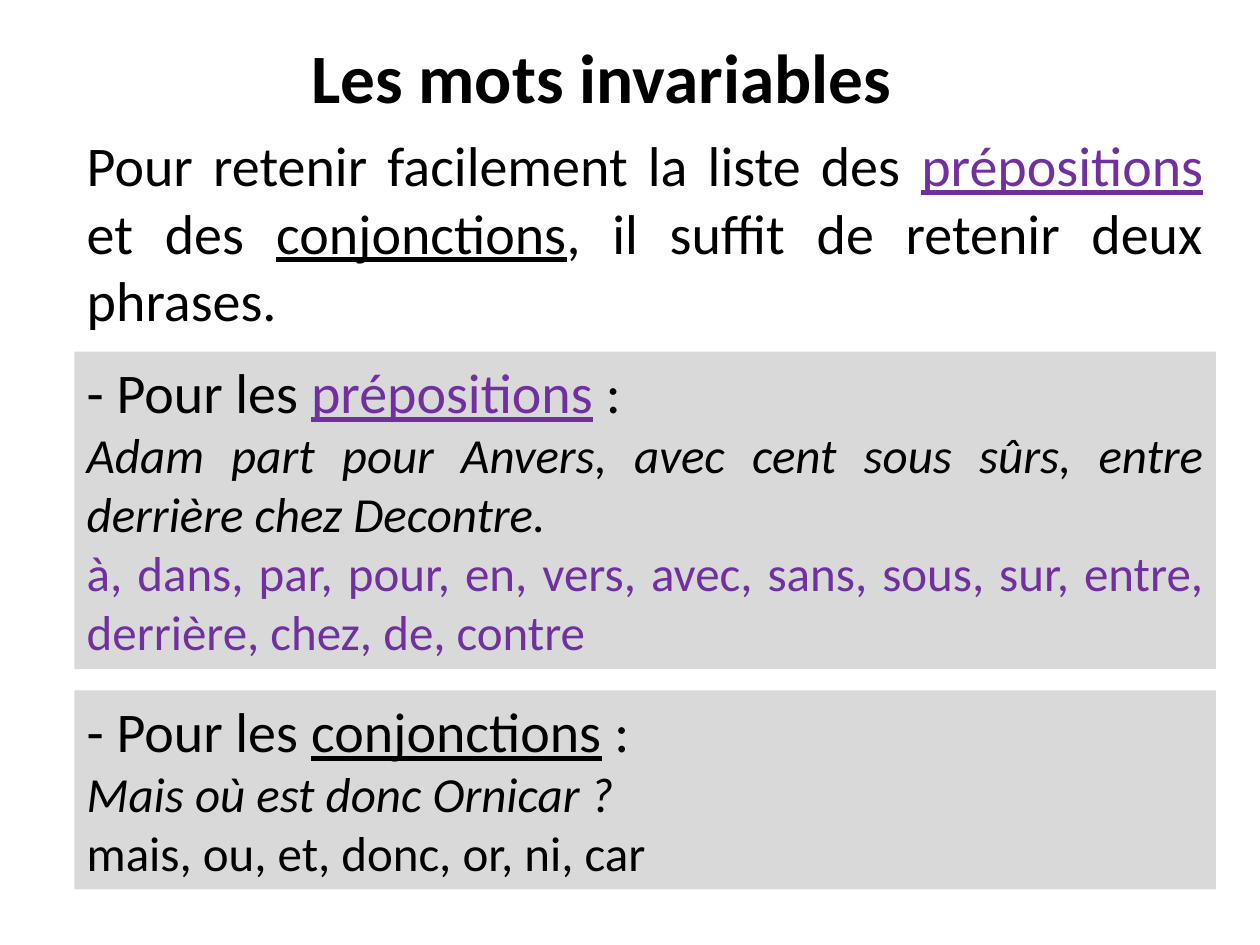
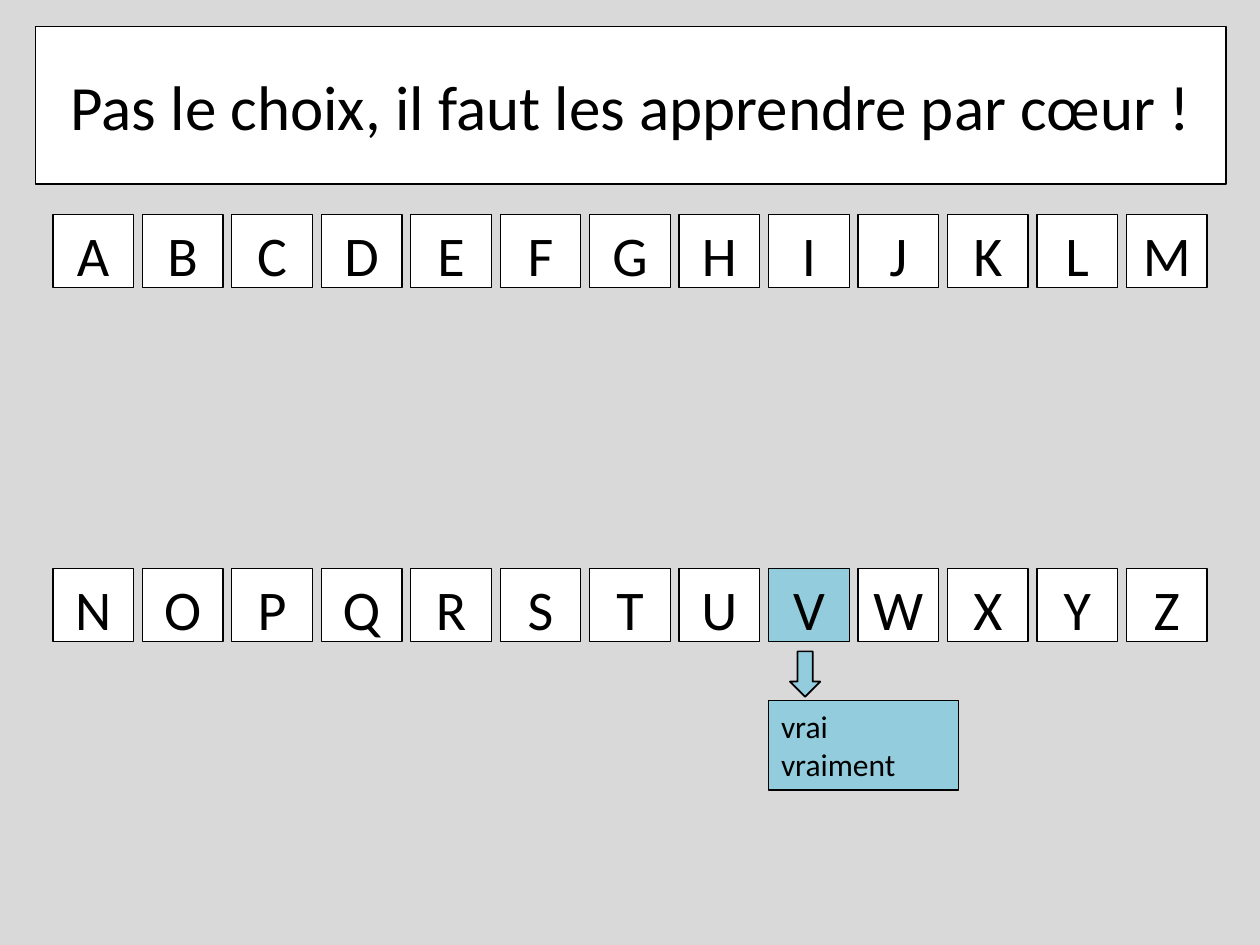
"""Build two French lesson slides on invariable words."""
from dataclasses import dataclass

from pptx import Presentation
from pptx.dml.color import RGBColor
from pptx.enum.shapes import MSO_SHAPE
from pptx.enum.text import MSO_ANCHOR, MSO_AUTO_SIZE, PP_ALIGN
from pptx.util import Inches, Pt


@dataclass(frozen=True)
class Theme:
    font: str = "Calibri"
    black: RGBColor = RGBColor(0x00, 0x00, 0x00)
    white: RGBColor = RGBColor(0xFF, 0xFF, 0xFF)
    grey: RGBColor = RGBColor(0xD9, 0xD9, 0xD9)
    purple: RGBColor = RGBColor(0x70, 0x30, 0xA0)
    blue: RGBColor = RGBColor(0x93, 0xCD, 0xDD)
    lesson_title: float = 39.6
    banner: float = 36
    lead: float = 32
    example: float = 28
    word: float = 18
    outline: float = 0.75
    arrow_outline: float = 1


THEME = Theme()


def add_panel(slide, at, fill=None, outline=None, kind=MSO_SHAPE.RECTANGLE):
    panel = slide.shapes.add_shape(kind, *map(Inches, at))
    panel.shadow.inherit = False
    if fill is None:
        panel.fill.background()
    else:
        panel.fill.solid()
        panel.fill.fore_color.rgb = fill
    if outline is None:
        panel.line.fill.background()
    else:
        panel.line.color.rgb = THEME.black
        panel.line.width = Pt(outline)
    return panel


def write(panel, lines, align, anchor=MSO_ANCHOR.TOP, grow=False):
    frame = panel.text_frame
    frame.word_wrap = True
    frame.vertical_anchor = anchor
    frame.auto_size = MSO_AUTO_SIZE.SHAPE_TO_FIT_TEXT if grow else MSO_AUTO_SIZE.NONE
    for index, (size, pieces) in enumerate(lines):
        paragraph = frame.add_paragraph() if index else frame.paragraphs[0]
        paragraph.alignment = align
        for text, style in pieces:
            run = paragraph.add_run()
            run.text = text
            run.font.name = THEME.font
            run.font.size = Pt(size)
            run.font.color.rgb = style.get("color", THEME.black)
            run.font.bold = style.get("bold", False)
            run.font.italic = style.get("italic", False)
            run.font.underline = style.get("underline", False)


prs = Presentation()
prs.slide_width, prs.slide_height = Inches(10), Inches(7.5)
blank = prs.slide_layouts[6]

plain = {}
italic = {"italic": True}
purple = {"color": THEME.purple}
prepositions = ("prépositions", {"color": THEME.purple, "underline": True})
conjunctions = ("conjonctions", {"underline": True})

lesson = prs.slides.add_slide(blank)
lesson_title = add_panel(lesson, (0.5, 0.3, 8.67, 0.61))
write(lesson_title, [(THEME.lesson_title, [("Les mots invariables ", {"bold": True})])],
      PP_ALIGN.CENTER, MSO_ANCHOR.MIDDLE)

sections = [
    (0.99, 1.72, None, [
        (THEME.lead, [("Pour retenir facilement la liste des ", plain), prepositions,
                      (" et des ", plain), conjunctions,
                      (", il suffit de retenir deux phrases.", plain)]),
    ]),
    (2.79, 2.52, THEME.grey, [
        (THEME.lead, [("- Pour les ", plain), prepositions, (" :", plain)]),
        (THEME.example, [("Adam part pour Anvers, avec cent sous sûrs, "
                          "entre derrière chez Decontre.", italic)]),
        (THEME.example, [("à, dans, par, pour, en, vers, avec, sans, sous, sur, "
                          "entre, derrière, chez, de, contre", purple)]),
    ]),
    (5.48, 1.58, THEME.grey, [
        (THEME.lead, [("- Pour les ", plain), conjunctions, (" :", plain)]),
        (THEME.example, [("Mais où est donc Ornicar ?", italic)]),
        (THEME.example, [("mais, ou, et, donc, or, ni, car", plain)]),
    ]),
]
for top, height, fill, lines in sections:
    section = add_panel(lesson, (0.59, top, 9.06, height), fill)
    write(section, lines, PP_ALIGN.JUSTIFY, grow=True)

alphabet = prs.slides.add_slide(blank)
alphabet.background.fill.solid()
alphabet.background.fill.fore_color.rgb = THEME.grey
banner = add_panel(alphabet, (0.28, 0.21, 9.45, 1.25), THEME.white, THEME.outline)
write(banner, [(THEME.banner, [("Pas le choix, il faut les apprendre par cœur !", plain)])],
      PP_ALIGN.CENTER, MSO_ANCHOR.MIDDLE)

chosen_letter = "V"
for top, letters in ((1.7, "ABCDEFGHIJKLM"), (4.51, "NOPQRSTUVWXYZ")):
    for column, letter in enumerate(letters):
        fill = THEME.blue if letter == chosen_letter else THEME.white
        tile = add_panel(alphabet, (0.42 + 0.71 * column, top, 0.64, 0.58),
                         fill, THEME.outline)
        write(tile, [(THEME.lead, [(letter, plain)])], PP_ALIGN.CENTER)
        tile.text_frame.paragraphs[0].space_before = Pt(0.2 * THEME.lead)

word_list = add_panel(alphabet, (6.1, 5.56, 1.51, 0.71), THEME.blue, THEME.outline)
write(word_list, [(THEME.word, [(word, plain)]) for word in ("vrai", "vraiment")],
      PP_ALIGN.LEFT, grow=True)
add_panel(alphabet, (6.27, 5.17, 0.24, 0.36), THEME.blue, THEME.arrow_outline,
          MSO_SHAPE.DOWN_ARROW)

prs.save("out.pptx")
